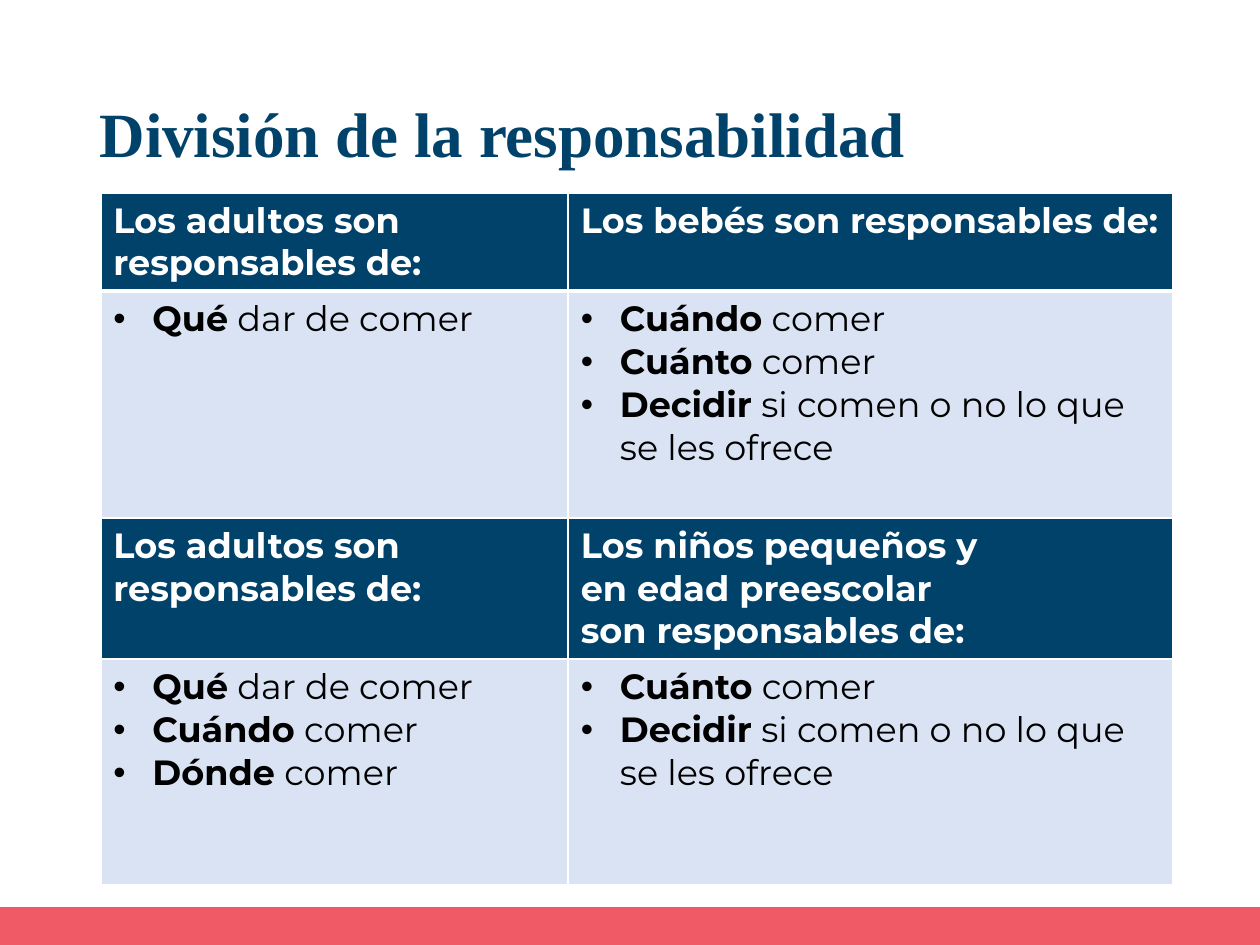
from dataclasses import dataclass

from lxml.etree import SubElement
from pptx import Presentation
from pptx.dml.color import RGBColor as Color
from pptx.enum.shapes import MSO_SHAPE as Shape
from pptx.enum.text import MSO_ANCHOR as Anchor, PP_ALIGN as Align
from pptx.oxml.ns import qn
from pptx.util import Emu, Inches, Pt


@dataclass(frozen=True)
class Theme:
    navy: str = "00426A"
    pale: str = "DAE3F3"
    coral: str = "F05A66"
    white: str = "FFFFFF"
    black: str = "000000"
    title_font: str = "Times New Roman"
    body_font: str = "Montserrat"
    title_size: int = 36
    body_size: int = 20


THEME = Theme()
TITLE = "División de la responsabilidad"
ADULTS = "Los adultos son responsables de:"
WHAT = ("Qué", " dar de comer")
WHEN = ("Cuándo", " comer")
WHERE = ("Dónde", " comer")
HOW_MUCH = ("Cuánto", " comer")
DECIDE = ("Decidir", " si comen o no lo que se les ofrece")
SECTIONS = [
    ((ADULTS, "Los bebés son responsables de:"),
     ([WHAT], [WHEN, HOW_MUCH, DECIDE])),
    ((ADULTS, "Los niños pequeños y \nen edad preescolar \nson responsables de:"),
     ([WHAT, WHEN, WHERE], [HOW_MUCH, DECIDE])),
]
COLUMN_WIDTHS = (3.71, 4.8)
ROW_HEIGHTS = (0.78, 1.8, 1.12, 1.79)
INDENT = Inches(0.31)


def add_run(paragraph, text, color, bold, font=THEME.body_font, size=THEME.body_size):
    """Add one formatted run to a paragraph."""
    run = paragraph.add_run()
    run.text = text
    run.font.name = font
    run.font.size = Pt(size)
    run.font.bold = bold
    run.font.color.rgb = Color.from_string(color)


def add_bullet(paragraph):
    """Give a paragraph a hanging round bullet."""
    properties = paragraph._p.get_or_add_pPr()
    properties.set("marL", str(INDENT))
    properties.set("indent", str(-INDENT))
    SubElement(properties, qn("a:buFont"), typeface="Arial")
    SubElement(properties, qn("a:buChar"), char="•")


def style_cell(cell, fill, bottom, top):
    """Set the white borders and the fill of a cell."""
    properties = cell._tc.get_or_add_tcPr()
    for side, points in (("L", 1), ("R", 1), ("T", top), ("B", bottom)):
        line = SubElement(properties, qn(f"a:ln{side}"), w=str(Pt(points)))
        solid = SubElement(line, qn("a:solidFill"))
        SubElement(solid, qn("a:srgbClr"), val=THEME.white)
    cell.fill.solid()
    cell.fill.fore_color.rgb = Color.from_string(fill)


def write_heading(cell, text):
    """Write a heading whose lines are split by breaks."""
    paragraph = cell.text_frame.paragraphs[0]
    for index, line in enumerate(text.split("\n")):
        if index:
            paragraph.add_line_break()
        add_run(paragraph, line, THEME.white, True)


def write_list(cell, items):
    """Write bullets that open with a bold word."""
    frame = cell.text_frame
    for index, (keyword, rest) in enumerate(items):
        paragraph = frame.add_paragraph() if index else frame.paragraphs[0]
        add_bullet(paragraph)
        add_run(paragraph, keyword, THEME.black, True)
        add_run(paragraph, rest, THEME.black, False)


def add_title(slide):
    """Place and format the slide title."""
    title = slide.shapes.title
    title.left, title.top, title.width, title.height = map(Inches, (0.69, 0.36, 8.62, 1.45))
    title.text_frame.vertical_anchor = Anchor.MIDDLE
    paragraph = title.text_frame.paragraphs[0]
    paragraph.alignment = Align.LEFT
    paragraph.line_spacing = 0.9
    add_run(paragraph, TITLE, THEME.navy, True, THEME.title_font, THEME.title_size)


def add_band(slide, width, height):
    """Add the coloured band along the foot of the slide."""
    depth = Emu(int(height * 0.04))
    band = slide.shapes.add_shape(Shape.RECTANGLE, 0, height - depth, width, depth)
    band.shadow.inherit = False
    band.fill.solid()
    band.fill.fore_color.rgb = Color.from_string(THEME.coral)
    band.line.fill.background()


def add_duties(slide):
    """Add the table of alternating heading and list rows."""
    rows = [row for section in SECTIONS for row in section]
    table = slide.shapes.add_table(
        len(rows), len(COLUMN_WIDTHS), Inches(0.8), Inches(1.53),
        Inches(sum(COLUMN_WIDTHS)), Inches(sum(ROW_HEIGHTS))).table
    for column, width in zip(table.columns, COLUMN_WIDTHS):
        column.width = Inches(width)
    for row, height in zip(table.rows, ROW_HEIGHTS):
        row.height = Inches(height)
    for row_index, row in enumerate(rows):
        is_heading = row_index % 2 == 0
        write = write_heading if is_heading else write_list
        for column_index, content in enumerate(row):
            cell = table.cell(row_index, column_index)
            style_cell(cell, THEME.navy if is_heading else THEME.pale,
                       3 if row_index == 0 else 1, 3 if row_index == 1 else 1)
            write(cell, content)


def main():
    """Build and save the slide."""
    presentation = Presentation()
    presentation.slide_width, presentation.slide_height = Inches(10), Inches(7.5)
    slide = presentation.slides.add_slide(presentation.slide_layouts[5])
    add_band(slide, presentation.slide_width, presentation.slide_height)
    add_title(slide)
    add_duties(slide)
    presentation.save("out.pptx")


if __name__ == "__main__":
    main()
